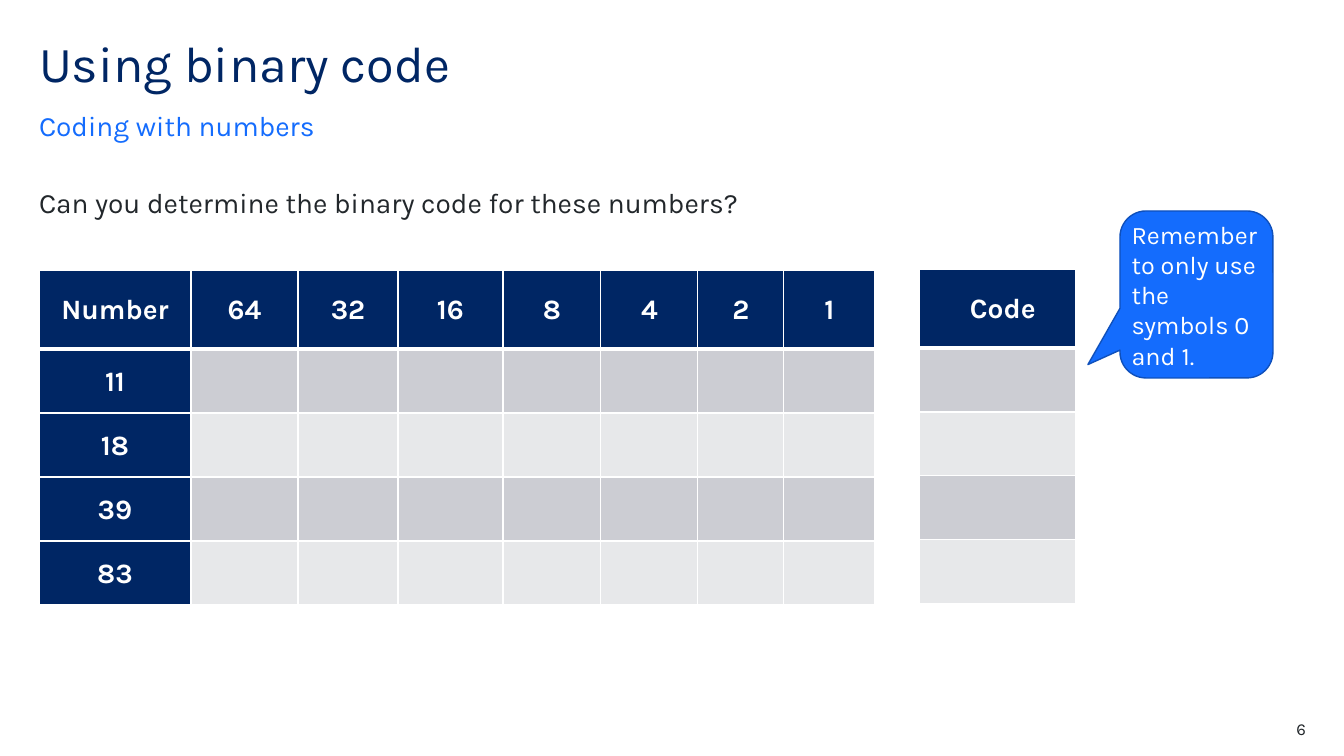
"""Build the slide on writing numbers in binary code."""
import pptx
import pptx.util
import pptx.dml.color
import pptx.enum.shapes
import pptx.enum.text
import pptx.oxml
import pptx.oxml.ns
from lxml import etree

EMU_PER_PX = 12192000 / 1344
NAVY, BLUE, INK, WHITE = "002664", "146CFD", "22272B", "FFFFFF"
BANDS = ["CCCDD3", "E7E8EA"]
ALIGN = pptx.enum.text.PP_ALIGN
ANCHOR = pptx.enum.text.MSO_ANCHOR
qn = pptx.oxml.ns.qn
rgb = pptx.dml.color.RGBColor.from_string


def px(*lengths):
    """Turn pixel lengths into EMU."""
    return [pptx.util.Emu(round(length * EMU_PER_PX)) for length in lengths]


def write(holder, text, size, color, align=ALIGN.LEFT, anchor=ANCHOR.TOP, margin=0, bold=False):
    """Fill a shape or table cell with one formatted paragraph and return it."""
    frame = holder.text_frame
    frame.text = text
    frame.word_wrap = True
    target = frame if hasattr(frame, "margin_left") and not hasattr(holder, "is_merge_origin") else holder
    target.vertical_anchor = anchor
    (target.margin_left, target.margin_top,
     target.margin_right, target.margin_bottom) = px(*[margin] * 4)
    paragraph = frame.paragraphs[0]
    paragraph.alignment = align
    font = paragraph.runs[0].font
    font.name, font.size, font.bold = "Karla", pptx.util.Pt(size), bold
    font.color.rgb = rgb(color)
    return paragraph


deck = pptx.Presentation()
deck.slide_width, deck.slide_height = px(1344, 756)
slide = deck.slides.add_slide(deck.slide_layouts[1])

title, subtitle = slide.placeholders
title.left, title.top, title.width, title.height = px(39, 39, 1111, 60)
write(title, "Using binary code", 36, NAVY).line_spacing = 0.9

subtitle.left, subtitle.top, subtitle.width, subtitle.height = px(39, 108, 1111, 34)
heading = write(subtitle, "Coding with numbers", 20, BLUE, anchor=ANCHOR.BOTTOM)
heading.space_before, heading.space_after = pptx.util.Pt(0), pptx.util.Pt(12)
heading_format = heading._p.get_or_add_pPr()
heading_format.set("marL", "0")
heading_format.set("indent", "0")
etree.SubElement(heading_format, qn("a:buNone"))
for placeholder in (title, subtitle):
    placeholder.text_frame.auto_size = pptx.enum.text.MSO_AUTO_SIZE.NONE

question = slide.shapes.add_textbox(*px(39, 185, 1144, 66))
write(question, "Can you determine the binary code for these numbers?", 20, INK)

place_values = [str(2 ** power) for power in range(6, -1, -1)]
numbers = ["11", "18", "39", "83"]
row_heights = [79] + [64] * len(numbers)
grids = [
    (39, 270, [152, 107, 100, 105, 98, 97, 86, 91],
     [["Number"] + place_values] + [[number] + [""] * 7 for number in numbers]),
    (919, 269, [157], [["Code"]] + [[""] for number in numbers]),
]
for left, top, column_widths, rows in grids:
    table = slide.shapes.add_table(
        len(rows), len(column_widths),
        *px(left, top, sum(column_widths), sum(row_heights))).table
    for column, width in zip(table.columns, px(*column_widths)):
        column.width = width
    for row, height in zip(table.rows, px(*row_heights)):
        row.height = height
    for r, labels in enumerate(rows):
        for c, label in enumerate(labels):
            cell = table.cell(r, c)
            if label:
                align = ALIGN.LEFT if label == "Code" else ALIGN.CENTER
                entry = write(cell, label, 20, WHITE, align, ANCHOR.MIDDLE, 2, True)
                entry.line_spacing, entry.space_after = 1.07, pptx.util.Pt(8)
                if label == "Code":
                    entry._p.get_or_add_pPr().set("marL", str(px(49)[0]))
            borders = cell._tc.get_or_add_tcPr()
            thick_side = {0: "B", 1: "T"}.get(r)
            for side in "LRTB":
                points = 3 if side == thick_side else 1
                border = etree.SubElement(
                    borders, qn("a:ln" + side), w=str(pptx.util.Pt(points)))
                paint = etree.SubElement(border, qn("a:solidFill"))
                etree.SubElement(paint, qn("a:srgbClr"), val=WHITE)
            cell.fill.solid()
            cell.fill.fore_color.rgb = rgb(NAVY if label else BANDS[(r - 1) % 2])

reminder = slide.shapes.add_shape(
    pptx.enum.shapes.MSO_SHAPE.ROUNDED_RECTANGULAR_CALLOUT, *px(1120, 211, 153, 167))
reminder.shadow.inherit = False
for index, value in enumerate([-0.71, 0.42, 0.17]):
    reminder.adjustments[index] = value
reminder.fill.solid()
reminder.fill.fore_color.rgb = rgb(BLUE)
reminder.line.color.rgb = rgb("0F50BB")
reminder.line.width = pptx.util.Pt(1)
write(reminder, "Remember to only use the symbols 0 and 1.", 18, WHITE,
      anchor=ANCHOR.MIDDLE, margin=4)

page_number = slide.shapes.add_textbox(*px(1227, 719, 79, 20))
write(page_number, "6", 12, INK, ALIGN.RIGHT)

deck.save("out.pptx")
